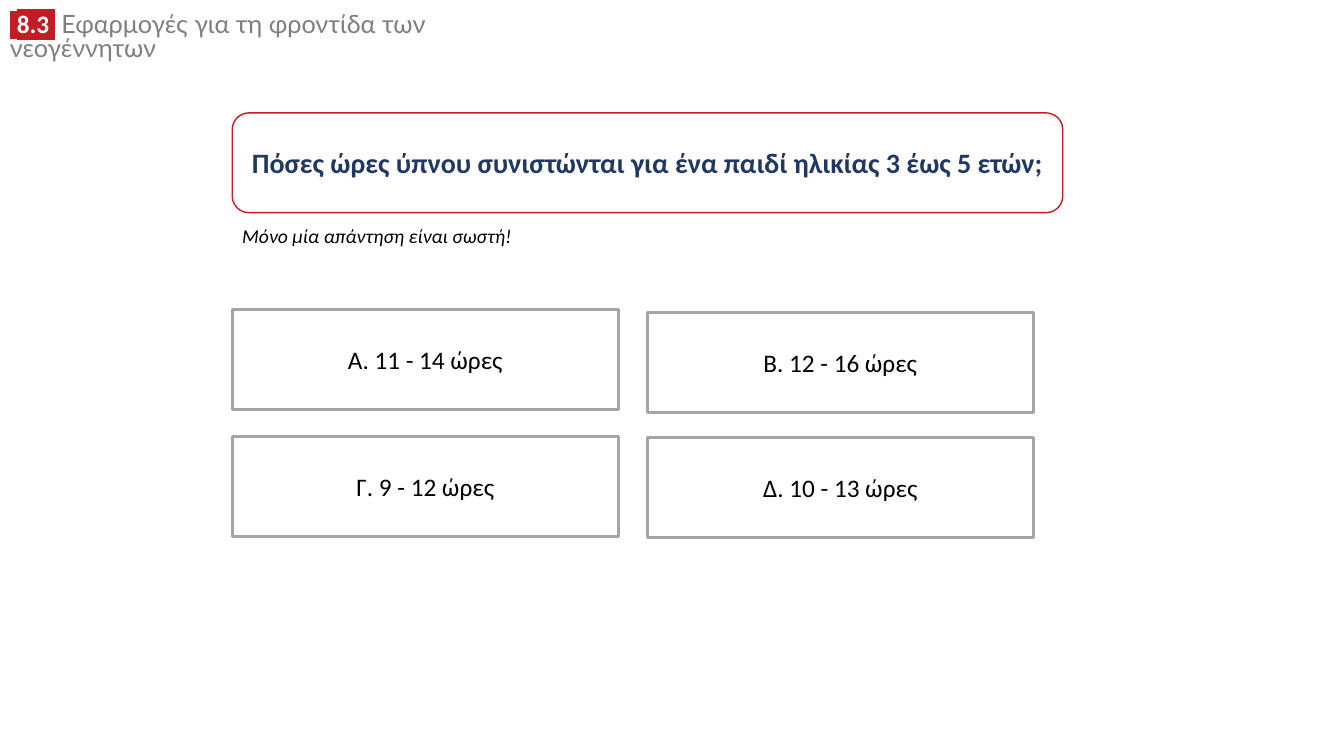
from dataclasses import dataclass

from lxml import etree
from pptx import Presentation
from pptx.dml.color import RGBColor
from pptx.enum.shapes import MSO_SHAPE
from pptx.enum.text import MSO_ANCHOR, MSO_AUTO_SIZE, PP_ALIGN
from pptx.oxml.ns import qn
from pptx.util import Inches, Pt

RECT = MSO_SHAPE.RECTANGLE
ROUND = MSO_SHAPE.ROUNDED_RECTANGLE
MIDDLE = MSO_ANCHOR.MIDDLE
TOP = MSO_ANCHOR.TOP
GROW = MSO_AUTO_SIZE.SHAPE_TO_FIT_TEXT
CENTER = PP_ALIGN.CENTER

WIDE, HIGH = Inches(13.33), Inches(7.5)
COLS = ROWS = 100
WHITE, BLACK, RED = "FFFFFF", "000000", "C01E24"
GREY, NAVY, SILVER = "7F7F7F", "203864", "A5A5A5"

LEFT, ROW_TOP = 17.28, 40.93
COL_STEP, ROW_STEP = 30.88, 16.8
CARD_W, CARD_H = 28.73, 13.2


@dataclass
class Area:
    col: float
    row: float
    cols: float
    rows: float

    def box(self) -> tuple[int, int, int, int]:
        return (int(WIDE * self.col / COLS), int(HIGH * self.row / ROWS),
                int(WIDE * self.cols / COLS), int(HIGH * self.rows / ROWS))


@dataclass
class Style:
    size: int
    color: str
    bold: bool = False
    italic: bool = False
    face: str = "Calibri"


@dataclass
class Panel:
    area: Area
    kind: int
    line: str
    weight: float
    text: str
    style: Style


@dataclass
class Answer:
    text: str
    col: int
    row: int
    nudge: float = 0


@dataclass
class Part:
    text: str
    style: Style
    mark: str = ""


def paint(code: str) -> RGBColor:
    return RGBColor.from_string(code)


def set_font(font, style: Style) -> None:
    font.name = style.face
    font.size = Pt(style.size)
    font.bold = style.bold
    font.italic = style.italic
    font.color.rgb = paint(style.color)


def set_mark(run, code: str) -> None:
    mark = etree.Element(qn("a:highlight"))
    etree.SubElement(mark, qn("a:srgbClr"), val=code)
    run.font._element.find(qn("a:solidFill")).addnext(mark)


def add_panel(slide, panel: Panel) -> None:
    shape = slide.shapes.add_shape(panel.kind, *panel.area.box())
    shape.shadow.inherit = False
    shape.fill.solid()
    shape.fill.fore_color.rgb = paint(WHITE)
    shape.line.color.rgb = paint(panel.line)
    shape.line.width = Pt(panel.weight)
    frame = shape.text_frame
    frame.word_wrap = True
    frame.vertical_anchor = MIDDLE
    para = frame.paragraphs[0]
    para.text = panel.text
    para.alignment = CENTER
    set_font(para.font, panel.style)


def add_text(slide, area: Area):
    frame = slide.shapes.add_textbox(*area.box()).text_frame
    frame.word_wrap = True
    frame.auto_size = GROW
    frame.vertical_anchor = TOP
    return frame.paragraphs[0]


def add_title(slide, area: Area, parts: list[Part]) -> None:
    para = add_text(slide, area)
    para.line_spacing = 0.8
    for part in parts:
        run = para.add_run()
        run.text = part.text
        set_font(run.font, part.style)
        if part.mark:
            set_mark(run, part.mark)


def add_note(slide, area: Area, text: str, style: Style) -> None:
    para = add_text(slide, area)
    para.text = text
    set_font(para.font, style)


def main() -> None:
    deck = Presentation()
    deck.slide_width, deck.slide_height = WIDE, HIGH
    slide = deck.slides.add_slide(deck.slide_layouts[6])

    add_title(slide, Area(0, 1.2, 42.99, 4.53), [
        Part(" ", Style(18, WHITE, bold=True, face="Arial"), RED),
        Part("8.3 ", Style(18, WHITE, bold=True), RED),
        Part(" Εφαρμογές για τη φροντίδα των νεογέννητων",
             Style(18, GREY, face="Lato")),
    ])
    add_panel(slide, Panel(
        Area(LEFT, 14.93, 61.8, CARD_H), ROUND, RED, 1,
        "Πόσες ώρες ύπνου συνιστώνται για ένα παιδί ηλικίας 3 έως 5 ετών;",
        Style(20, NAVY, bold=True)))
    add_note(slide, Area(LEFT, 28.93, 22.36, 4.53),
             "Μόνο μία απάντηση είναι σωστή!", Style(14, BLACK, italic=True))

    answers = [
        Answer("A. 11 - 14 ώρες", 0, 0),
        Answer("B. 12 - 16 ώρες", 1, 0, 0.4),
        Answer("Γ. 9 - 12 ώρες", 0, 1),
        Answer("Δ. 10 - 13 ώρες", 1, 1, 0.14),
    ]
    for item in answers:
        area = Area(LEFT + item.col * COL_STEP,
                    ROW_TOP + item.row * ROW_STEP + item.nudge,
                    CARD_W, CARD_H)
        add_panel(slide, Panel(area, RECT, SILVER, 2, item.text,
                               Style(18, BLACK)))

    deck.save("out.pptx")


if __name__ == "__main__":
    main()
